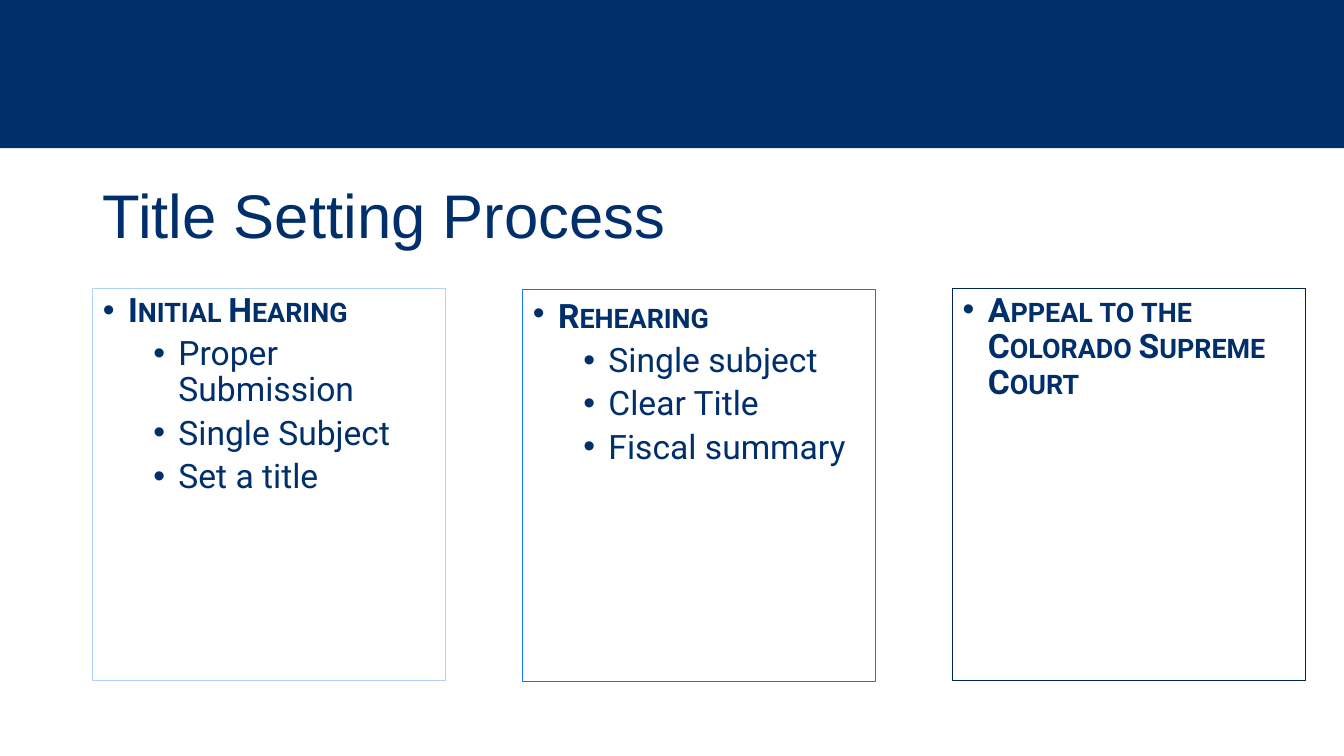
from dataclasses import dataclass

from lxml import etree
from pptx import Presentation
from pptx.dml.color import RGBColor
from pptx.enum import shapes, text
from pptx.oxml import ns
from pptx.util import Inches, Pt


@dataclass(frozen=True)
class Theme:
    navy: RGBColor = RGBColor.from_string("002F6C")
    head_font: str = "Arial"
    body_font: str = "Roboto"
    title_size: int = 44
    body_size: int = 24
    gap_size: int = 28


@dataclass(frozen=True)
class Stage:
    name: str
    steps: tuple[str, ...]
    line: str
    top: float = 2.86
    tail: str = ""


THEME = Theme()
LEFT, PITCH, WIDTH, HEIGHT = 0.92, 4.265, 3.5, 3.89
STAGES = (
    Stage("Initial Hearing",
          ("Proper Submission", "Single Subject", "Set a title"), "AFD2FF"),
    Stage("Rehearing",
          ("Single subject", "Clear Title", "Fiscal summary"), "0E77FF",
          top=2.87, tail=" "),
    Stage("Appeal to the Colorado Supreme Court", (), "002351"),
)


def place(shape, left: float, top: float, width: float, height: float) -> None:
    shape.left, shape.top = Inches(left), Inches(top)
    shape.width, shape.height = Inches(width), Inches(height)


def add_run(para, words: str, font: str, size: int, bold: bool = False):
    run = para.add_run()
    run.text = words
    run.font.name, run.font.size, run.font.bold = font, Pt(size), bold
    run.font.color.rgb = THEME.navy
    return run


def set_bullet(para, level: int) -> None:
    props = para._p.get_or_add_pPr()
    props.set("marL", str(Inches(0.25 + 0.5 * level)))
    props.set("indent", str(Inches(-0.25)))
    etree.SubElement(props, ns.qn("a:buFont")).set("typeface", "Arial")
    etree.SubElement(props, ns.qn("a:buChar")).set("char", "•")
    para.level = level
    para.alignment = text.PP_ALIGN.LEFT
    para.line_spacing = 0.9
    para.space_before = Pt(5 * level)


def fill_stage(box, stage: Stage, left: float) -> None:
    place(box, left, stage.top, WIDTH, HEIGHT)
    box.line.color.rgb = RGBColor.from_string(stage.line)
    box.line.width = Pt(1)
    frame = box.text_frame
    frame.word_wrap = True
    frame.auto_size = text.MSO_AUTO_SIZE.NONE
    frame.vertical_anchor = text.MSO_ANCHOR.TOP
    head = frame.paragraphs[0]
    set_bullet(head, 0)
    run = add_run(head, stage.name, THEME.body_font, THEME.body_size, True)
    run.font._element.set("cap", "small")
    if stage.tail:
        add_run(head, stage.tail, THEME.body_font, THEME.gap_size, True)
    for step in stage.steps:
        para = frame.add_paragraph()
        set_bullet(para, 1)
        add_run(para, step, THEME.body_font, THEME.body_size)


def add_band(slide) -> None:
    band = slide.shapes.add_shape(
        shapes.MSO_SHAPE.RECTANGLE, 0, 0, Inches(13.33), Inches(1.47))
    band.shadow.inherit = False
    band.fill.solid()
    band.fill.fore_color.rgb = THEME.navy
    band.line.fill.background()


def fill_title(title) -> None:
    place(title, LEFT, 1.67, 11.5, 1)
    frame = title.text_frame
    frame.auto_size = text.MSO_AUTO_SIZE.NONE
    frame.vertical_anchor = text.MSO_ANCHOR.MIDDLE
    para = frame.paragraphs[0]
    para.alignment = text.PP_ALIGN.LEFT
    para.line_spacing = 0.9
    add_run(para, "Title Setting Process", THEME.head_font, THEME.title_size)


def main() -> None:
    deck = Presentation()
    deck.slide_width, deck.slide_height = Inches(13.33), Inches(7.5)
    slide = deck.slides.add_slide(deck.slide_layouts[3])
    add_band(slide)
    fill_title(slide.shapes.title)
    boxes = (slide.placeholders[1], slide.placeholders[2],
             slide.shapes.add_textbox(0, 0, 0, 0))
    for col, (box, stage) in enumerate(zip(boxes, STAGES)):
        fill_stage(box, stage, LEFT + col * PITCH)
    deck.save("out.pptx")


if __name__ == "__main__":
    main()
